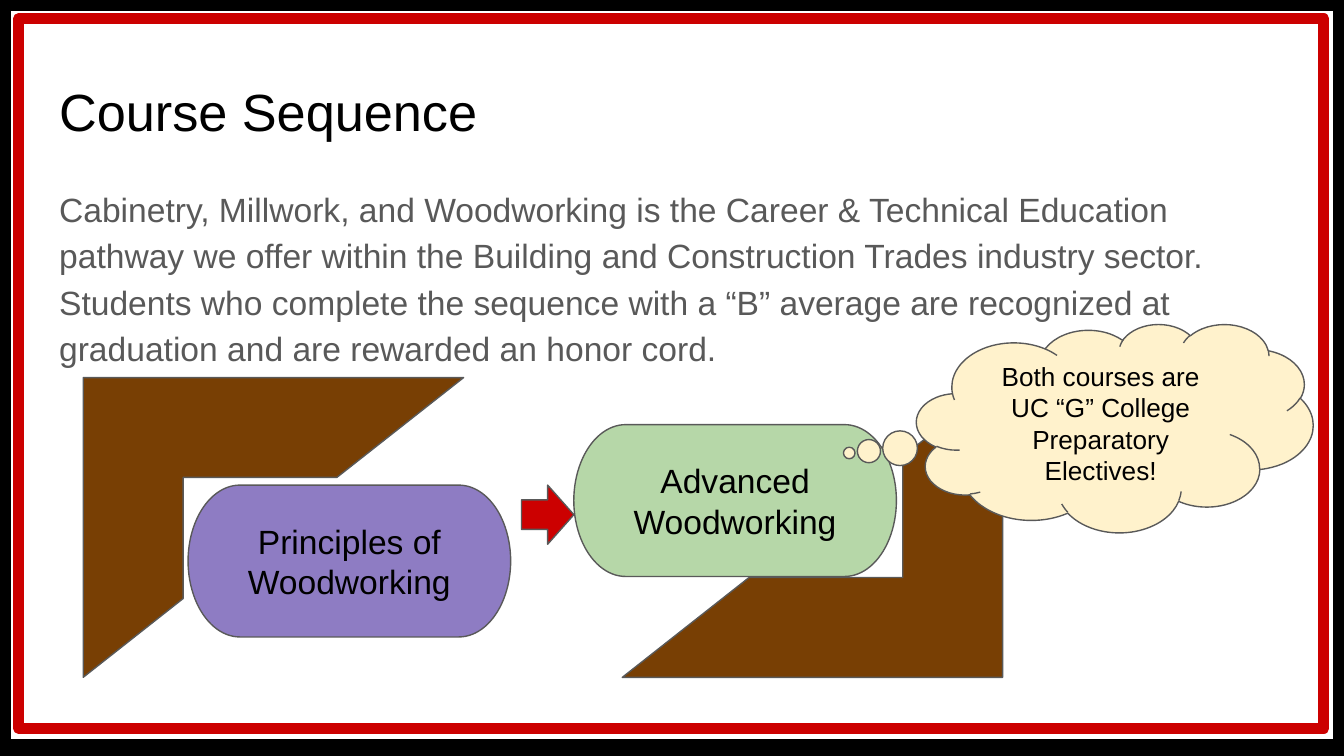
from lxml import etree
from pptx import Presentation
from pptx.dml.color import RGBColor
from pptx.enum.shapes import MSO_SHAPE as Shape
from pptx.enum.text import MSO_ANCHOR as Anchor, MSO_AUTO_SIZE as AutoSize, PP_ALIGN as Align
from pptx.oxml.ns import qn
from pptx.util import Inches, Pt

COLORS = {
    "black": "000000",
    "red": "CC0000",
    "gray": "595959",
    "brown": "783F04",
    "purple": "8E7CC3",
    "green": "B6D7A8",
    "cream": "FFF2CC",
}


def write(shape, text, size=18, color="black", align=Align.CENTER,
          anchor=Anchor.MIDDLE, line_spacing=1.0, space_after=0):
    frame = shape.text_frame
    frame.word_wrap = True
    frame.auto_size = AutoSize.NONE
    frame.vertical_anchor = anchor
    frame.margin_left = frame.margin_right = Inches(0.1)
    frame.margin_top = frame.margin_bottom = Inches(0.1)
    frame.text = text
    paragraph = frame.paragraphs[0]
    properties = paragraph._p.get_or_add_pPr()
    properties.set("marL", "0")
    properties.set("indent", "0")
    etree.SubElement(properties, qn("a:buNone"))
    paragraph.alignment = align
    paragraph.line_spacing = line_spacing
    paragraph.space_before = Pt(0)
    paragraph.space_after = Pt(space_after)
    font = paragraph.runs[0].font
    font.name = "Arial"
    font.size = Pt(size)
    font.color.rgb = RGBColor.from_string(COLORS[color])


def add_figure(kind, box, fill=None, line="gray", width=0.75):
    figure = slide.shapes.add_shape(kind, *map(Inches, box))
    figure.shadow.inherit = False
    if fill:
        figure.fill.solid()
        figure.fill.fore_color.rgb = RGBColor.from_string(COLORS[fill])
    else:
        figure.fill.background()
    figure.line.color.rgb = RGBColor.from_string(COLORS[line])
    figure.line.width = Pt(width)
    return figure


prs = Presentation()
prs.slide_width, prs.slide_height = Inches(10), Inches(10 * 9 / 16)
slide = prs.slides.add_slide(prs.slide_layouts[1])

# Border, behind the placeholders
borders = [((0, 0, 10, 5.58), "black", 12), ((0.14, 0.14, 9.71, 5.28), "red", 6)]
for depth, (box, color, width) in enumerate(borders):
    border = add_figure(Shape.RECTANGLE, box, line=color, width=width)
    slide.shapes._spTree.insert(2 + depth, border._element)

# Title and description
title, description = slide.shapes.title, slide.placeholders[1]
for holder, top, height in [(title, 0.49, 0.63), (description, 1.26, 1.55)]:
    holder.left, holder.top = Inches(0.34), Inches(top)
    holder.width, holder.height = Inches(9.32), Inches(height)
write(title, "Course Sequence", size=28, align=Align.LEFT, anchor=Anchor.TOP)
write(
    description,
    "Cabinetry, Millwork, and Woodworking is the Career & Technical Education "
    "pathway we offer within the Building and Construction Trades industry sector. "
    "Students who complete the sequence with a “B” average are recognized at "
    "graduation and are rewarded an honor cord.",
    color="gray", align=Align.LEFT, anchor=Anchor.TOP, line_spacing=1.15, space_after=16,
)

# Wooden corners around the courses
for left, rotation in [(0.62, 0), (4.63, 180)]:
    corner = add_figure(Shape.HALF_FRAME, (left, 2.81, 2.83, 2.23), "brown")
    corner.rotation = rotation

# Courses in order
courses = [
    ("Principles of Woodworking", 1.4, 3.61, "purple"),
    ("Advanced Woodworking", 4.27, 3.16, "green"),
]
for name, left, top, color in courses:
    course = add_figure(Shape.FLOWCHART_TERMINATOR, (left, top, 2.4, 1.13), color)
    write(course, name)
add_figure(Shape.RIGHT_ARROW, (3.88, 3.61, 0.39, 0.44), "red")

# Remark on the courses
remark = add_figure(Shape.CLOUD_CALLOUT, (6.82, 2.41, 2.95, 1.55), "cream")
remark.adjustments[0], remark.adjustments[1] = -0.67, 0.12
write(remark, "Both courses are UC “G” College Preparatory Electives!", size=14)

prs.save("out.pptx")
